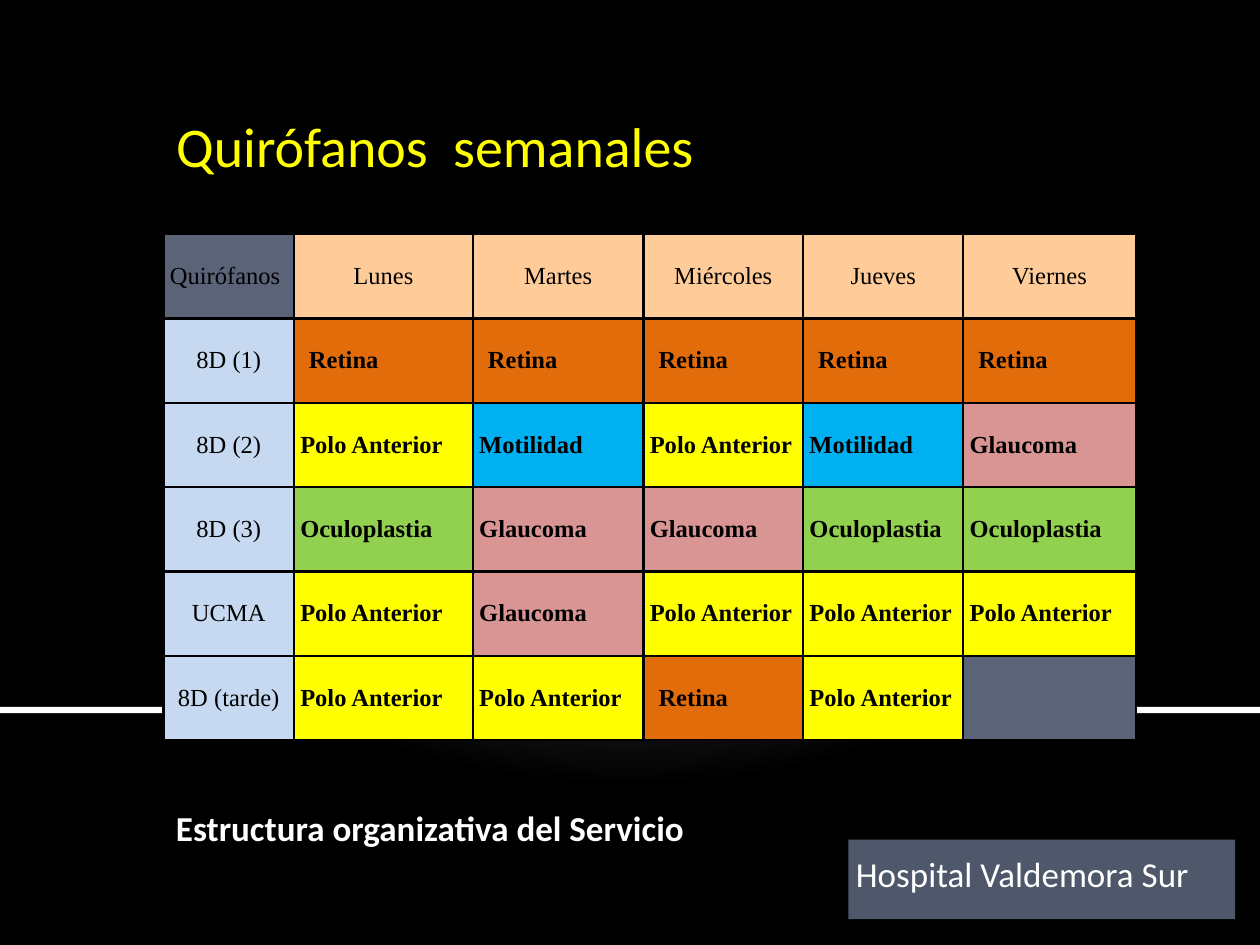
"""Build the weekly operating-room schedule slide."""
from lxml.etree import SubElement
from pptx import Presentation
from pptx.dml.color import RGBColor
from pptx.enum.shapes import MSO_SHAPE
from pptx.enum.text import MSO_ANCHOR, PP_ALIGN
from pptx.oxml import parse_xml
from pptx.oxml.ns import nsdecls, qn
from pptx.util import Pt

BLACK = RGBColor(0, 0, 0)
WHITE = RGBColor(255, 255, 255)
YELLOW = RGBColor(255, 255, 0)
SLATE = RGBColor(0x5A, 0x63, 0x78)
DARK_SLATE = RGBColor(0x4F, 0x57, 0x6A)
PEACH = RGBColor(0xFF, 0xCC, 0x99)
PALE_BLUE = RGBColor(0xC6, 0xD9, 0xF1)
ORANGE = RGBColor(0xE3, 0x6C, 0x0A)
BLUE = RGBColor(0, 0xB0, 0xF0)
ROSE = RGBColor(0xD9, 0x95, 0x94)
GREEN = RGBColor(0x92, 0xD0, 0x50)

TITLE = "Quirófanos  semanales"
SUBTITLE = "Estructura organizativa del Servicio"
HOSPITAL = "Hospital Valdemora Sur"
SCHEDULE = [
    ["Quirófanos", "Lunes", "Martes", "Miércoles", "Jueves", "Viernes"],
    ["8D (1)", "Retina", "Retina", "Retina", "Retina", "Retina"],
    ["8D (2)", "Polo Anterior", "Motilidad", "Polo Anterior", "Motilidad", "Glaucoma"],
    ["8D (3)", "Oculoplastia", "Glaucoma", "Glaucoma", "Oculoplastia", "Oculoplastia"],
    ["UCMA", "Polo Anterior", "Glaucoma", "Polo Anterior", "Polo Anterior", "Polo Anterior"],
    ["8D (tarde)", "Polo Anterior", "Polo Anterior", "Retina", "Polo Anterior", ""],
]
UNIT_FILLS = {"Retina": ORANGE, "Polo Anterior": YELLOW, "Motilidad": BLUE,
              "Glaucoma": ROSE, "Oculoplastia": GREEN, "": SLATE}
COL_WIDTHS = [74.5, 102.25, 97.5, 91.25, 91.5, 98.75]
ROW_HEIGHT = 48.2
GLOW_STOPS = [(0, "C0C0C0"), (12, "C0C0C0"), (20, "BEBEBE"), (100, "000000")]


def write(tf, text, size=14, font="Calibri", color=BLACK, bold=False, align=PP_ALIGN.LEFT):
    p = tf.paragraphs[0]
    p.alignment = align
    if text:
        r = p.add_run()
        r.text = text
        r.font.size, r.font.name, r.font.bold = Pt(size), font, bold
        r.font.color.rgb = color


def add_rect(s, box, color):
    sp = s.shapes.add_shape(MSO_SHAPE.RECTANGLE, *map(Pt, box))
    sp.shadow.inherit = False
    sp.fill.solid()
    sp.fill.fore_color.rgb = color
    sp.line.fill.background()
    return sp


def set_glow(s):
    s.background.fill.solid()
    solid = s.background._cSld.find(".//" + qn("a:solidFill"))
    stops = "".join(f'<a:gs pos="{pos * 1000}"><a:srgbClr val="{rgb}"/></a:gs>'
                    for pos, rgb in GLOW_STOPS)
    solid.getparent().replace(solid, parse_xml(
        f'<a:gradFill {nsdecls("a")} rotWithShape="1"><a:gsLst>{stops}</a:gsLst>'
        '<a:path path="circle"><a:fillToRect l="10000" t="-25000" r="10000" b="125000"/>'
        '</a:path></a:gradFill>'))


def set_borders(cell, color=BLACK, width=1.5):
    tc_pr = cell._tc.get_or_add_tcPr()
    for side in ("lnL", "lnR", "lnT", "lnB"):
        ln = SubElement(tc_pr, qn(f"a:{side}"), w=str(Pt(width)))
        SubElement(SubElement(ln, qn("a:solidFill")), qn("a:srgbClr"), val=str(color))


def fill_cell(cell, row, col, text):
    set_borders(cell)
    is_head = row == 0 or col == 0
    corner = row == col == 0
    if corner:
        color = SLATE
    elif is_head:
        color = PEACH if row == 0 else PALE_BLUE
    else:
        color = UNIT_FILLS[text]
    cell.fill.solid()
    cell.fill.fore_color.rgb = color
    cell.vertical_anchor = MSO_ANCHOR.MIDDLE
    cell.margin_left = Pt(8.6 if text == "Retina" else 3.6)
    cell.margin_right = Pt(3.6)
    cell.margin_top = cell.margin_bottom = 0
    write(cell.text_frame, text, font="Times New Roman", bold=not is_head,
          align=PP_ALIGN.CENTER if is_head and not corner else PP_ALIGN.LEFT)


def add_schedule(s):
    table = s.shapes.add_table(len(SCHEDULE), len(COL_WIDTHS), Pt(93.5), Pt(133.8),
                               Pt(sum(COL_WIDTHS)), Pt(ROW_HEIGHT * len(SCHEDULE))).table
    table.first_row = table.horz_banding = False
    for column, width in zip(table.columns, COL_WIDTHS):
        column.width = Pt(width)
    for i, names in enumerate(SCHEDULE):
        table.rows[i].height = Pt(ROW_HEIGHT)
        for j, name in enumerate(names):
            fill_cell(table.cell(i, j), i, j, name)


def main():
    prs = Presentation()
    prs.slide_width, prs.slide_height = Pt(720), Pt(540)
    s = prs.slides.add_slide(prs.slide_layouts[5])
    set_glow(s)
    add_rect(s, (0, 0, 720, 405), BLACK)
    rule = add_rect(s, (0, 404, 720, 3.6), WHITE)

    title = s.shapes.title
    rule._element.addnext(title._element)
    title.left, title.top, title.width, title.height = map(Pt, (93.5, 60.2, 414, 46))
    title.text_frame.vertical_anchor = MSO_ANCHOR.TOP
    write(title.text_frame, TITLE, size=32, color=YELLOW)

    sp = s.shapes.add_textbox(*map(Pt, (93.5, 457.2, 374.4, 31.7)))
    sp.text_frame.word_wrap = True
    write(sp.text_frame, SUBTITLE, size=20, color=WHITE, bold=True)

    add_schedule(s)

    tf = add_rect(s, (484.8, 479.8, 221, 45.4), DARK_SLATE).text_frame
    tf.vertical_anchor = MSO_ANCHOR.TOP
    tf.margin_left, tf.margin_top = Pt(4.3), Pt(7.2)
    write(tf, HOSPITAL, size=20, color=WHITE)
    prs.save("out.pptx")


if __name__ == "__main__":
    main()
